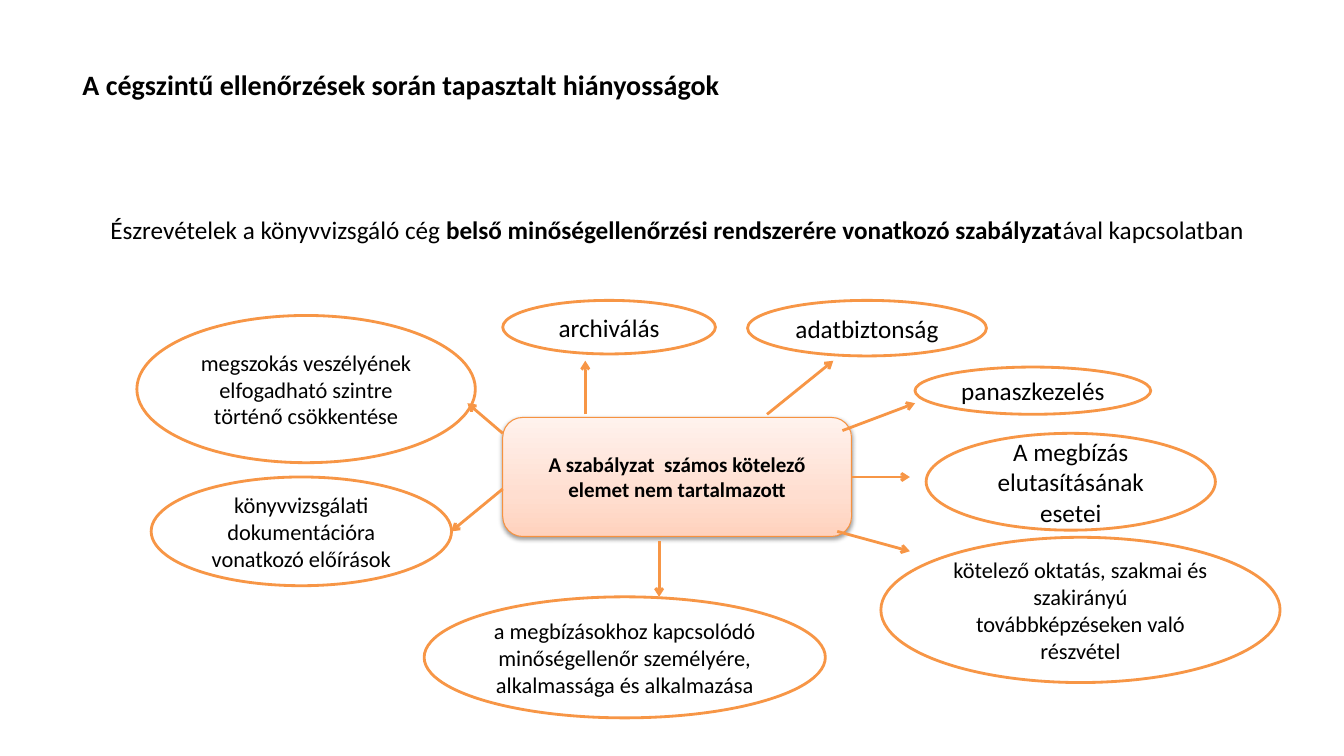
from lxml.etree import SubElement
from pptx import Presentation
from pptx.dml.color import RGBColor
from pptx.enum.shapes import MSO_CONNECTOR as CONN, MSO_SHAPE as SHAPE
from pptx.enum.text import MSO_ANCHOR as ANCHOR, PP_ALIGN as ALIGN
from pptx.oxml.ns import qn
from pptx.util import Cm, Pt

ORANGE = "F79646"
HUB_STOPS = [(0, "FFD2BD"), (35, "FFDED0"), (100, "FFF2ED")]

BUBBLES = [
    ("archiválás", 18, 9.22, 0, 5.36, 1.35),
    ("adatbiztonság", 18, 15.39, 0, 6.02, 1.4),
    ("panaszkezelés", 18, 19.61, 1.68, 5.94, 1.19),
    ("könyvvizsgálati dokumentációra vonatkozó előírások", 16, 0.36, 4.45, 7.57, 2.74),
    ("megszokás veszélyének elfogadható szintre történő csökkentése", 16, 0, 0.38, 8.53, 3.71),
    ("A megbízás elutasításának esetei", 18, 19.89, 3.35, 7.29, 2.44),
    ("kötelező oktatás, szakmai és szakirányú továbbképzéseken való részvétel",
     16, 18.75, 5.97, 10.06, 3.66),
    ("a megbízásokhoz kapcsolódó minőségellenőr személyére, alkalmassága és alkalmazása",
     16, 7.24, 7.47, 10.11, 3.05),
]

ARROWS = [
    (15.88, 2.87, 17.55, 1.52),
    (11.3, 2.87, 11.3, 1.52),
    (17.78, 3.28, 19.61, 2.59),
    (18.01, 4.45, 19.48, 4.45),
    (17.65, 5.82, 19.48, 6.32),
    (9.22, 4.75, 7.92, 5.82),
    (9.22, 3.35, 8.33, 2.59),
    (13.16, 6.07, 13.16, 7.47),
]


def rgb(value):
    return RGBColor.from_string(value)


def write(sp, runs, size, align=ALIGN.CENTER, anchor=ANCHOR.MIDDLE):
    tf = sp.text_frame
    tf.word_wrap = True
    tf.vertical_anchor = anchor
    p = tf.paragraphs[0]
    p.alignment = align
    for text, bold in runs:
        r = p.add_run()
        r.text = text
        r.font.name = "Calibri"
        r.font.size = Pt(size)
        r.font.bold = bold
        r.font.color.rgb = rgb("000000")


def text_line(s, x, y, w, h, runs, size, align, anchor):
    sp = s.shapes.add_textbox(Cm(x), Cm(y), Cm(w), Cm(h))
    write(sp, runs, size, align, anchor)


def bubble(s, x, y, w, h, text, size):
    sp = s.shapes.add_shape(SHAPE.OVAL, Cm(x), Cm(y), Cm(w), Cm(h))
    sp.shadow.inherit = False
    sp.fill.solid()
    sp.fill.fore_color.rgb = rgb("FFFFFF")
    sp.line.color.rgb = rgb(ORANGE)
    sp.line.width = Pt(2)
    write(sp, [(text, False)], size)


def hub(s, x, y, w, h, text):
    sp = s.shapes.add_shape(SHAPE.ROUNDED_RECTANGLE, Cm(x), Cm(y), Cm(w), Cm(h))
    sp.fill.gradient()
    sp.fill.gradient_angle = 90
    sp.line.color.rgb = rgb("F69240")
    sp.line.width = Pt(0.75)
    sp.shadow.inherit = False
    spPr = sp.element.spPr
    stops = spPr.find(".//" + qn("a:gsLst"))
    for stop in list(stops):
        stops.remove(stop)
    for pos, color in HUB_STOPS:
        stop = SubElement(stops, qn("a:gs"), pos=str(pos * 1000))
        SubElement(stop, qn("a:srgbClr"), val=color)
    shadow = SubElement(spPr.find(qn("a:effectLst")), qn("a:outerShdw"),
                        blurRad=str(Pt(3.1)), dist=str(Pt(1.6)),
                        dir="5400000", rotWithShape="0")
    black = SubElement(shadow, qn("a:srgbClr"), val="000000")
    SubElement(black, qn("a:alpha"), val="38000")
    write(sp, [(text, True)], 15)


def arrow(s, x1, y1, x2, y2):
    c = s.shapes.add_connector(CONN.STRAIGHT, Cm(x1), Cm(y1), Cm(x2), Cm(y2))
    c.line.color.rgb = rgb(ORANGE)
    c.line.width = Pt(2)
    SubElement(c.line._get_or_add_ln(), qn("a:tailEnd"), type="arrow")
    SubElement(c.element.spPr, qn("a:effectLst"))


def diagram(s, x, y):
    hub(s, x + 9.22, y + 2.95, 8.79, 3, "A szabályzat  számos kötelező elemet nem tartalmazott")
    for text, size, dx, dy, w, h in BUBBLES:
        bubble(s, x + dx, y + dy, w, h, text, size)
    for x1, y1, x2, y2 in ARROWS:
        arrow(s, x + x1, y + y1, x + x2, y + y2)


def main():
    prs = Presentation()
    prs.slide_width, prs.slide_height = Cm(33.87), Cm(19.05)
    s = prs.slides.add_slide(prs.slide_layouts[6])
    text_line(s, 1.83, 1.22, 29.57, 1.8,
              [("A cégszintű ellenőrzések során tapasztalt hiányosságok", True)],
              20, ALIGN.LEFT, ANCHOR.MIDDLE)
    text_line(s, 2.44, 5.28, 29.24, 1.02,
              [("Észrevételek a könyvvizsgáló cég ", False),
               ("belső minőségellenőrzési rendszerére vonatkozó szabályzat", True),
               ("ával kapcsolatban", False)],
              18, ALIGN.CENTER, ANCHOR.TOP)
    diagram(s, 3.45, 7.57)
    prs.save("out.pptx")


if __name__ == "__main__":
    main()
